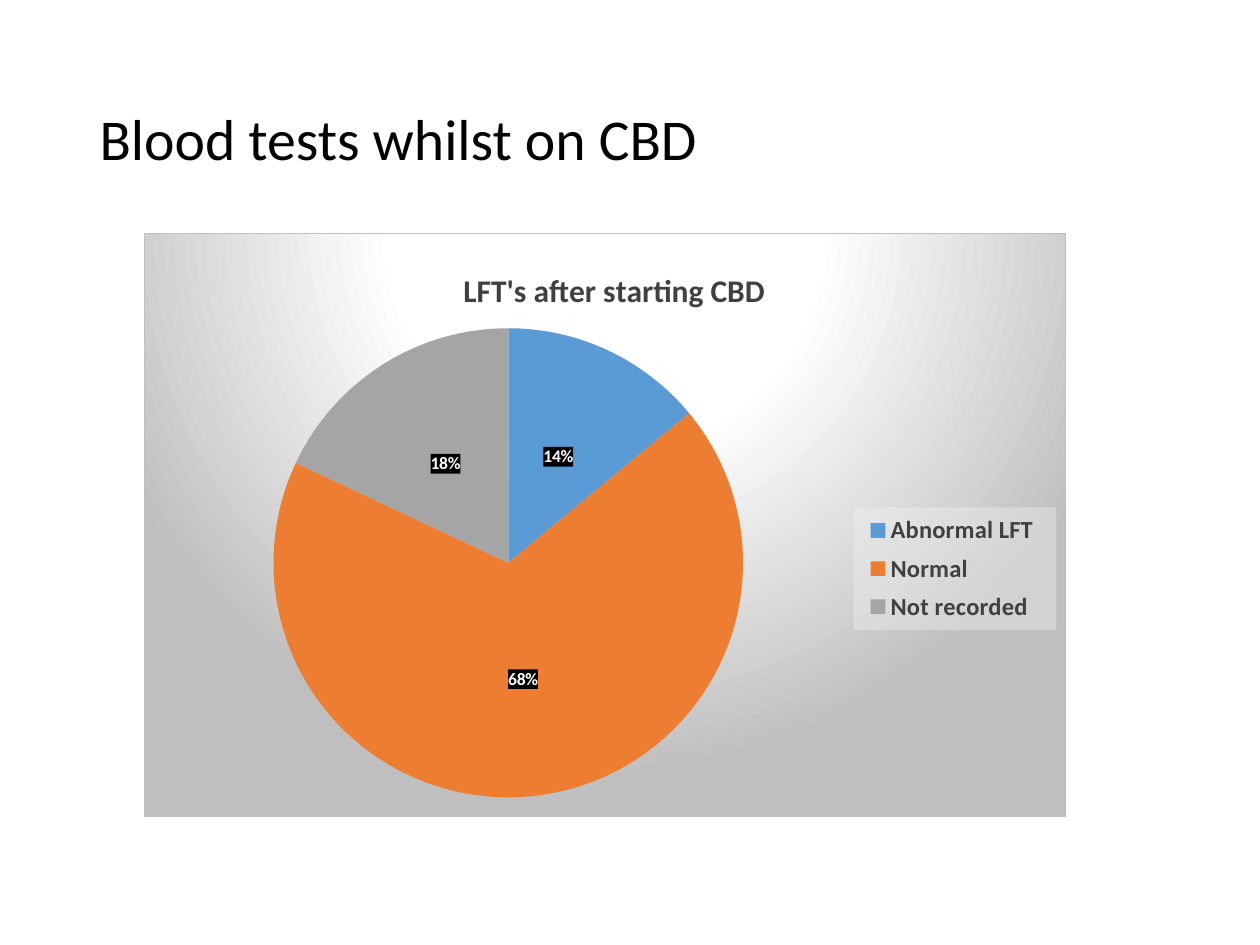
from lxml import etree
from pptx import Presentation
from pptx import util as u
from pptx.chart.data import CategoryChartData
from pptx.dml.color import RGBColor
from pptx.enum import chart as ch, text
from pptx.oxml import parse_xml
from pptx.oxml.ns import nsdecls, qn

FONT = "Calibri"
DARK = "404040"
SLICES = [("Abnormal LFT ", 14, "5B9BD5"),
          ("Normal", 68, "ED7D31"),
          ("Not recorded ", 18, "A5A5A5")]


def px(n):
    return u.Emu(round(n * 914400 / 126))


def rgb(code):
    return RGBColor.from_string(code)


def style(font, size, color, bold=False):
    font.name, font.size, font.bold = FONT, u.Pt(size), bold
    font.color.rgb = rgb(color)


def box(fill, line="<a:ln><a:noFill/></a:ln>"):
    return parse_xml(f'<c:spPr {nsdecls("c", "a")}>{fill}{line}</c:spPr>')


def solid(color, alpha):
    return (f'<a:solidFill><a:srgbClr val="{color}">'
            f'<a:alpha val="{alpha * 1000}"/></a:srgbClr></a:solidFill>')


def layout(inner=False, **parts):
    """Manual layout in fractions of the chart area."""
    node = parse_xml(f'<c:layout {nsdecls("c")}><c:manualLayout/></c:layout>')
    pairs = [("layoutTarget", "inner")] if inner else []
    pairs += [("xMode", "edge"), ("yMode", "edge"), *parts.items()]
    for tag, val in pairs:
        etree.SubElement(node[0], qn("c:" + tag)).set("val", str(val))
    return node


def place(owner, node, before):
    for old in owner.findall(qn("c:layout")):
        owner.remove(old)
    owner.find(qn("c:" + before)).addprevious(node)


def add_title(slide, words):
    title = slide.shapes.title
    title.left, title.top, title.width, title.height = map(px, (87, 50, 1086, 183))
    frame = title.text_frame
    frame.vertical_anchor = text.MSO_ANCHOR.MIDDLE
    para = frame.paragraphs[0]
    para.alignment, para.line_spacing = text.PP_ALIGN.LEFT, 0.9
    run = para.add_run()
    run.text = words
    style(run.font, 33, "000000")


def add_pie(slide):
    data = CategoryChartData()
    data.categories = [name for name, _, _ in SLICES]
    data.add_series("Series 1", [val for _, val, _ in SLICES])
    chart = slide.shapes.add_chart(
        ch.XL_CHART_TYPE.PIE, *map(px, (144, 233, 922, 584)), data).chart
    style(chart.font, 10, "000000")

    # Slices
    plot = chart.plots[0]
    plot.vary_by_categories = True
    for i, (_, _, color) in enumerate(SLICES):
        fill = plot.series[0].points[i].format.fill
        fill.solid()
        fill.fore_color.rgb = rgb(color)
    return chart


def add_labels(chart):
    labels = chart.plots[0].series[0].data_labels
    labels.show_percentage, labels.show_value = True, False
    labels.number_format, labels.number_format_is_linked = "0%", False
    labels.position = ch.XL_LABEL_POSITION.CENTER
    style(labels.font, 10, "FFFFFF", True)
    labels._element.find(qn("c:txPr")).addprevious(box(solid("000000", 75)))


def add_head(chart, words):
    chart.has_title = True
    head = chart.chart_title
    run = head.text_frame.paragraphs[0].add_run()
    run.text = words
    style(run.font, 18, DARK, True)
    head.include_in_layout = False
    place(head._element, layout(x=0.34, y=0.05), "overlay")


def add_legend(chart):
    chart.has_legend = True
    legend = chart.legend
    legend.position = ch.XL_LEGEND_POSITION.RIGHT
    legend.include_in_layout = False
    style(legend.font, 14, DARK, True)
    node = legend._element
    place(node, layout(x=0.77, y=0.47, w=0.22, h=0.21), "overlay")
    node.find(qn("c:txPr")).addprevious(box(solid("F2F2F2", 39)))


def paint(chart):
    """Radial backdrop, thin border and the pie's place."""
    stops = "".join(f'<a:gs pos="{pos * 1000}"><a:srgbClr val="{color}"/></a:gs>'
                    for pos, color in [(0, "FFFFFF"), (39, "FFFFFF"), (100, "BFBFBF")])
    fill = (f'<a:gradFill><a:gsLst>{stops}</a:gsLst><a:path path="circle">'
            '<a:fillToRect l="50000" t="-80000" r="50000" b="180000"/>'
            '</a:path></a:gradFill>')
    line = ('<a:ln w="9525"><a:solidFill><a:srgbClr val="BFBFBF"/>'
            '</a:solidFill></a:ln>')
    root = chart._chartSpace
    root.find(qn("c:txPr")).addprevious(box(fill, line))
    area = root.find(qn("c:chart")).find(qn("c:plotArea"))
    place(area, layout(True, x=0.14, y=0.16, w=0.51, h=0.81), "pieChart")


def main():
    deck = Presentation()
    deck.slide_width, deck.slide_height = px(1260), px(945)
    slide = deck.slides.add_slide(deck.slide_layouts[5])
    add_title(slide, "Blood tests whilst on CBD")
    chart = add_pie(slide)
    add_labels(chart)
    add_head(chart, "LFT's after starting CBD")
    add_legend(chart)
    paint(chart)
    deck.save("out.pptx")


if __name__ == "__main__":
    main()
